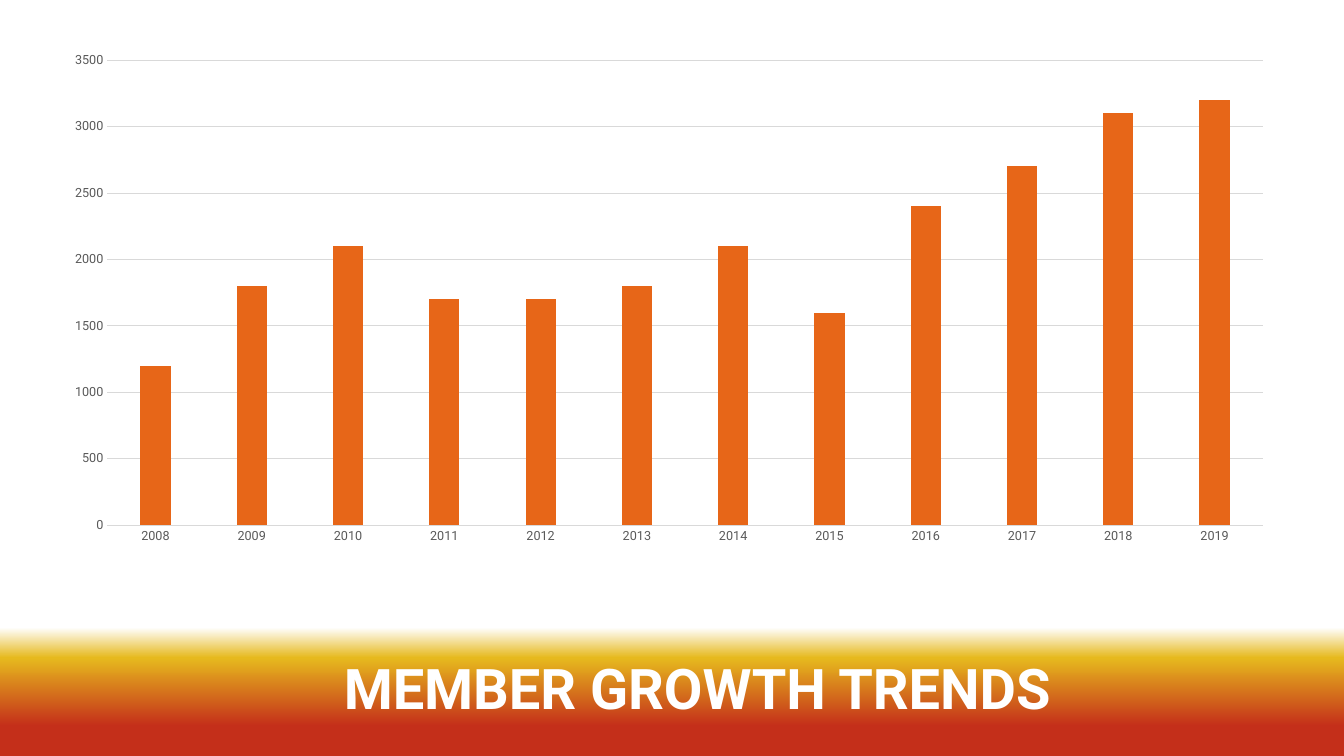
from copy import deepcopy

from lxml import etree
from pptx import Presentation
from pptx.chart.data import CategoryChartData
from pptx.dml.color import RGBColor
from pptx.enum.chart import XL_CHART_TYPE, XL_TICK_MARK
from pptx.enum.text import MSO_AUTO_SIZE, PP_ALIGN
from pptx.oxml.ns import qn
from pptx.util import Inches, Pt

COLUMNS = XL_CHART_TYPE.COLUMN_CLUSTERED
NO_TICK = XL_TICK_MARK.NONE
CENTER = PP_ALIGN.CENTER
GROW_SHAPE = MSO_AUTO_SIZE.SHAPE_TO_FIT_TEXT

TITLE = "MEMBER GROWTH TRENDS"
FIRST_YEAR = 2008
MEMBERS = [1200, 1800, 2100, 1700, 1700, 1800, 2100, 1600, 2400, 2700, 3100, 3200]
BACKGROUND_STOPS = [(0.26, "FFFFFF"), (0.83, "FFFFFF"), (0.87, "E6B91E"), (0.96, "C42F1A")]
FONT = "Roboto"
WHITE, ORANGE, GRID_GRAY, LABEL_GRAY = "FFFFFF", "E76618", "D9D9D9", "595959"

SLIDE_WIDTH, SLIDE_HEIGHT = 13.33, 7.5
LEFT = 0.5
CHART_BOX = (LEFT, 0.43, SLIDE_WIDTH - 2 * LEFT - 0.06, 5.07)
TITLE_BOX = (LEFT, 6.43, SLIDE_WIDTH - LEFT, 0.77)
PLOT_SHARES = {"x": 0.046, "y": 0.033, "w": 0.934, "h": 0.91}


def color(value):
    return RGBColor.from_string(value)


def style_font(font, size, value, bold=False):
    font.name = FONT
    font.size = Pt(size)
    font.bold = bold
    font.color.rgb = color(value)


def style_line(line):
    line.color.rgb = color(GRID_GRAY)
    line.width = Pt(0.75)


def paint_background(slide):
    fill = slide.background.fill
    fill.gradient()
    fill.gradient_angle = 270
    stop_list = slide.background.element.find(".//" + qn("a:gsLst"))
    while len(stop_list) < len(BACKGROUND_STOPS):
        stop_list.append(deepcopy(stop_list[0]))
    for stop, (position, value) in zip(fill.gradient_stops, BACKGROUND_STOPS):
        stop.position = position
        stop.color.rgb = color(value)


def place_plot(chart):
    plot_area = chart.plots[0]._element.getparent()
    for old_layout in plot_area.findall(qn("c:layout")):
        plot_area.remove(old_layout)
    layout = etree.Element(qn("c:layout"))
    plot_area.insert(0, layout)
    manual = etree.SubElement(layout, qn("c:manualLayout"))
    settings = {"layoutTarget": "inner", "xMode": "edge", "yMode": "edge", **PLOT_SHARES}
    for name, value in settings.items():
        etree.SubElement(manual, qn("c:" + name)).set("val", str(value))


def add_member_chart(slide):
    data = CategoryChartData()
    data.categories = [str(FIRST_YEAR + index) for index in range(len(MEMBERS))]
    data.add_series("Series 1", MEMBERS)
    chart = slide.shapes.add_chart(COLUMNS, *map(Inches, CHART_BOX), data).chart
    chart.has_legend = False
    chart.has_title = False
    style_font(chart.font, 10, "000000")

    plot = chart.plots[0]
    plot.gap_width = 219
    plot.overlap = -27
    plot.vary_by_categories = False
    series_fill = plot.series[0].format.fill
    series_fill.solid()
    series_fill.fore_color.rgb = color(ORANGE)

    for axis in (chart.category_axis, chart.value_axis):
        axis.major_tick_mark = NO_TICK
        axis.minor_tick_mark = NO_TICK
        style_font(axis.tick_labels.font, 9, LABEL_GRAY)
    style_line(chart.category_axis.format.line)
    value_axis = chart.value_axis
    value_axis.minimum_scale = 0
    value_axis.maximum_scale = 3500
    value_axis.major_unit = 500
    value_axis.format.line.fill.background()
    style_line(value_axis.major_gridlines.format.line)
    place_plot(chart)


def add_title(slide):
    text_frame = slide.shapes.add_textbox(*map(Inches, TITLE_BOX)).text_frame
    text_frame.word_wrap = True
    text_frame.auto_size = GROW_SHAPE
    text_frame.text = TITLE
    paragraph = text_frame.paragraphs[0]
    paragraph.alignment = CENTER
    paragraph.space_before = Pt(3)
    style_font(paragraph.runs[0].font, 40, WHITE, bold=True)


def main():
    presentation = Presentation()
    presentation.slide_width = Inches(SLIDE_WIDTH)
    presentation.slide_height = Inches(SLIDE_HEIGHT)
    slide = presentation.slides.add_slide(presentation.slide_layouts[6])
    paint_background(slide)
    add_title(slide)
    add_member_chart(slide)
    presentation.save("out.pptx")


if __name__ == "__main__":
    main()
